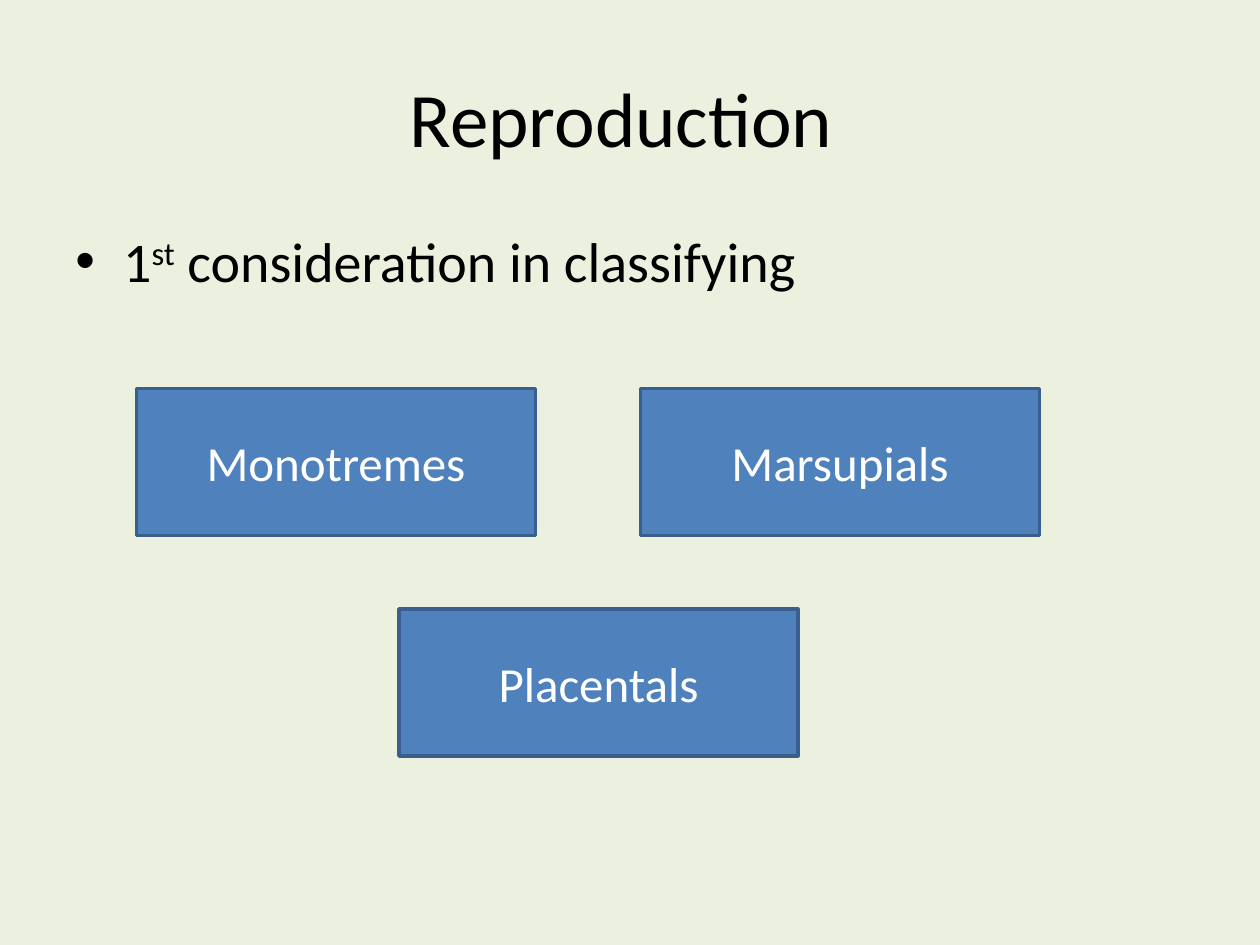
from dataclasses import dataclass

import lxml.etree
import pptx
import pptx.dml.color
import pptx.enum.shapes
import pptx.enum.text
import pptx.oxml.ns
import pptx.util

RGBColor = pptx.dml.color.RGBColor
BACKGROUND = RGBColor(0xEB, 0xF1, 0xDE)
BLACK = RGBColor(0x00, 0x00, 0x00)
WHITE = RGBColor(0xFF, 0xFF, 0xFF)
BOX_FILL = RGBColor(0x4F, 0x81, 0xBD)
BOX_LINE = RGBColor(0x3A, 0x5F, 0x8C)

FONT = "Calibri"
CELL = pptx.util.Inches(1) / 12  # the slide is a grid of 120 columns by 90 rows
BOX_COLUMNS, BOX_ROWS = 38, 14
BULLET_INDENT = pptx.util.Inches(0.38)


@dataclass(frozen=True)
class Group:
    name: str
    column: float
    row: float


GROUPS = (
    Group("Monotremes", 13, 37),
    Group("Marsupials", 61, 37),
    Group("Placentals", 38, 58),
)


def cells(*counts: float) -> list[int]:
    return [round(count * CELL) for count in counts]


def add_run(paragraph, text: str, size: float, color: RGBColor, baseline: int = 0) -> None:
    run = paragraph.add_run()
    run.text = text
    run.font.name = FONT
    run.font.size = pptx.util.Pt(size)
    run.font.color.rgb = color
    if baseline:
        run.font._element.set("baseline", str(baseline * 1000))


def add_text_box(slide, column: float, row: float, columns: float, rows: float):
    shape = slide.shapes.add_textbox(*cells(column, row, columns, rows))
    shape.text_frame.word_wrap = True
    return shape.text_frame


def center(text_frame):
    text_frame.vertical_anchor = pptx.enum.text.MSO_ANCHOR.MIDDLE
    paragraph = text_frame.paragraphs[0]
    paragraph.alignment = pptx.enum.text.PP_ALIGN.CENTER
    return paragraph


def add_bullet(paragraph) -> None:
    properties = paragraph._p.get_or_add_pPr()
    properties.set("marL", str(BULLET_INDENT))
    properties.set("indent", str(-BULLET_INDENT))
    qualified_name = pptx.oxml.ns.qn
    lxml.etree.SubElement(properties, qualified_name("a:buFont")).set("typeface", "Arial")
    lxml.etree.SubElement(properties, qualified_name("a:buChar")).set("char", "•")


def add_group(slide, group: Group) -> None:
    shape = slide.shapes.add_shape(
        pptx.enum.shapes.MSO_SHAPE.RECTANGLE,
        *cells(group.column, group.row, BOX_COLUMNS, BOX_ROWS),
    )
    shape.shadow.inherit = False
    shape.fill.solid()
    shape.fill.fore_color.rgb = BOX_FILL
    shape.line.color.rgb = BOX_LINE
    shape.line.width = pptx.util.Pt(2)
    add_run(center(shape.text_frame), group.name, 28, WHITE)


def main() -> None:
    presentation = pptx.Presentation()
    presentation.slide_width, presentation.slide_height = cells(120, 90)
    slide = presentation.slides.add_slide(presentation.slide_layouts[6])
    slide.background.fill.solid()
    slide.background.fill.fore_color.rgb = BACKGROUND

    # Title
    title = add_text_box(slide, 6, 3.6, 108, 15)
    add_run(center(title), "Reproduction ", 44, BLACK)

    # Bullet with a raised ordinal
    body = add_text_box(slide, 6, 21, 108, 59.4)
    paragraph = body.paragraphs[0]
    add_bullet(paragraph)
    add_run(paragraph, "1", 32, BLACK)
    add_run(paragraph, "st", 32, BLACK, baseline=30)
    add_run(paragraph, " consideration in classifying", 32, BLACK)

    # Mammal groups
    for group in GROUPS:
        add_group(slide, group)

    presentation.save("out.pptx")


if __name__ == "__main__":
    main()
